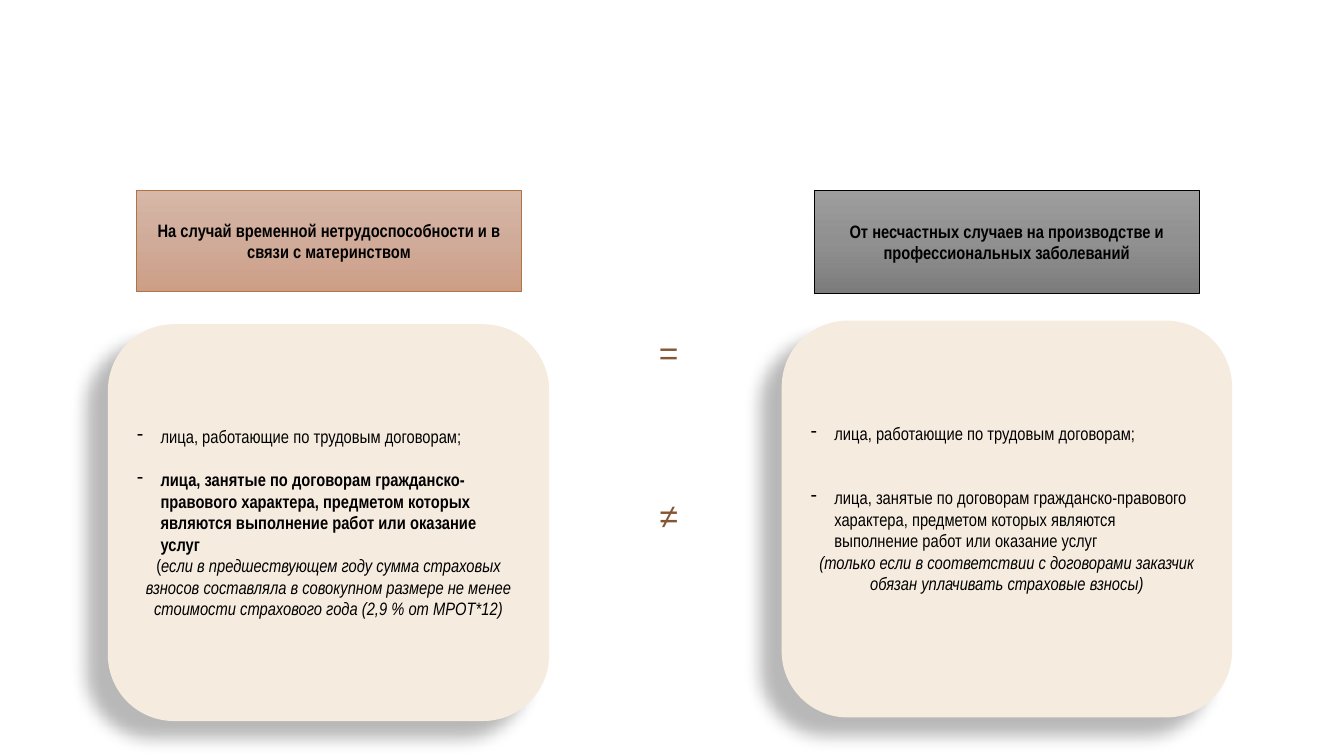
from copy import deepcopy

from lxml import etree
from pptx import Presentation
from pptx.dml.color import RGBColor
from pptx.enum.shapes import MSO_SHAPE
from pptx.enum.text import MSO_ANCHOR, MSO_AUTO_SIZE, PP_ALIGN
from pptx.oxml.ns import qn
from pptx.util import Cm, Pt

RECTANGLE, ROUNDED = MSO_SHAPE.RECTANGLE, MSO_SHAPE.ROUNDED_RECTANGLE
MIDDLE = MSO_ANCHOR.MIDDLE
LEFT, CENTER = PP_ALIGN.LEFT, PP_ALIGN.CENTER
GROW = MSO_AUTO_SIZE.SHAPE_TO_FIT_TEXT

BLACK = RGBColor(0x00, 0x00, 0x00)
CREAM = RGBColor(0xF6, 0xEB, 0xDF)
BROWN = RGBColor(0x85, 0x56, 0x33)
COPPER = RGBColor(0xB2, 0x73, 0x44)
COPPER_SHADES = [RGBColor(0xD7, 0xB7, 0xA7), RGBColor(0xD0, 0xAB, 0x99),
                 RGBColor(0xCD, 0x9E, 0x86)]
GREY_SHADES = [RGBColor(0x9D, 0x9D, 0x9D), RGBColor(0x90, 0x90, 0x90),
               RGBColor(0x7C, 0x7C, 0x7C)]

TEXT_SIZE = Pt(12.8)
LINE_HEIGHT = 15.3  # points
HANGING = Cm(0.59)

EMPLOYEES = "лица, работающие по трудовым договорам;"
CONTRACTORS = ("лица, занятые по договорам гражданско-правового характера, "
               "предметом которых являются выполнение работ или оказание услуг")
SICK_LEAVE_NOTE = ("если в предшествующем году сумма страховых взносов составляла "
                   "в совокупном размере не менее стоимости страхового года "
                   "(2,9 % от МРОТ*12)")
ACCIDENT_NOTE = ("(только если в соответствии с договорами заказчик обязан "
                 "уплачивать страховые взносы)")


def style_run(run, bold=False, italic=False):
    run.font.name = "Arial Narrow"
    run.font.size = TEXT_SIZE
    run.font.color.rgb = BLACK
    run.font.bold = bold
    run.font.italic = italic


def add_heading(slide, box, title, shades, outline):
    """Gradient rectangle with the name of the insurance type."""
    heading = slide.shapes.add_shape(RECTANGLE, *box)
    heading.shadow.inherit = False
    heading.line.color.rgb = outline
    heading.line.width = Pt(0.5)

    # Three-step gradient from top to bottom
    heading.fill.gradient()
    heading.fill.gradient_angle = 270
    steps = heading._element.spPr.find(".//" + qn("a:gsLst"))
    steps.insert(1, deepcopy(steps[0]))
    for index, (stop, shade) in enumerate(zip(heading.fill.gradient_stops, shades)):
        stop.color.rgb = shade
        stop.position = index / 2

    frame = heading.text_frame
    frame.word_wrap = True
    frame.vertical_anchor = MIDDLE
    frame.text = title
    frame.paragraphs[0].alignment = CENTER
    style_run(frame.paragraphs[0].runs[0], bold=True)


def add_soft_shadow(card):
    card.shadow.inherit = False
    effects = card._element.spPr.find(qn("a:effectLst"))
    shadow = etree.SubElement(effects, qn("a:outerShdw"), blurRad=str(Pt(11.8)),
                              dist=str(Pt(19.7)), dir=str(141 * 60000),
                              algn="tr", rotWithShape="0")
    color = etree.SubElement(shadow, qn("a:srgbClr"), val=str(BLACK))
    etree.SubElement(color, qn("a:alpha"), val="28000")


def add_dash(paragraph):
    properties = paragraph._p.get_or_add_pPr()
    properties.set("marL", str(HANGING))
    properties.set("indent", str(-HANGING))
    etree.SubElement(properties, qn("a:buChar"), char="-")


def add_card(slide, box, note_parts, gap_lines, bold_contractors, bottom_margin):
    """Rounded card listing the insured persons, with a centred note below."""
    card = slide.shapes.add_shape(ROUNDED, *box)
    card.fill.solid()
    card.fill.fore_color.rgb = CREAM
    card.line.fill.background()
    add_soft_shadow(card)

    frame = card.text_frame
    frame.word_wrap = True
    frame.vertical_anchor = MIDDLE
    frame.margin_bottom = bottom_margin

    # Insured persons
    employees, contractors = frame.paragraphs[0], frame.add_paragraph()
    for persons, wording, bold in ((employees, EMPLOYEES, False),
                                   (contractors, CONTRACTORS, bold_contractors)):
        persons.text = wording
        add_dash(persons)
        persons.alignment = LEFT
        style_run(persons.runs[0], bold=bold)
    contractors.space_before = Pt(gap_lines * LINE_HEIGHT)

    # Note
    note = frame.add_paragraph()
    note.alignment = CENTER
    for wording, italic in note_parts:
        run = note.add_run()
        run.text = wording
        style_run(run, italic=italic)


def add_sign(slide, box, sign):
    """Comparison sign between the two cards."""
    sign_box = slide.shapes.add_textbox(*box)
    frame = sign_box.text_frame
    frame.word_wrap = True
    frame.auto_size = GROW
    frame.text = sign
    frame.paragraphs[0].alignment = CENTER
    font = frame.paragraphs[0].runs[0].font
    font.name = "Arial"
    font.size = Pt(24)
    font.color.rgb = BROWN


def main():
    deck = Presentation()
    deck.slide_width, deck.slide_height = Cm(33.87), Cm(19.05)
    slide = deck.slides.add_slide(deck.slide_layouts[6])

    # Temporary disability and maternity
    add_heading(slide, (Cm(3.44), Cm(4.8), Cm(9.7), Cm(2.55)),
                "На случай временной нетрудоспособности и в связи с материнством",
                COPPER_SHADES, COPPER)
    add_card(slide, (Cm(2.72), Cm(8.17), Cm(11.12), Cm(10)),
             [("(", False), (SICK_LEAVE_NOTE, True)],
             gap_lines=1, bold_contractors=True, bottom_margin=Cm(0.13))

    # Accidents at work
    add_heading(slide, (Cm(20.52), Cm(4.8), Cm(9.7), Cm(2.6)),
                "От несчастных случаев на производстве и профессиональных заболеваний",
                GREY_SHADES, BLACK)
    add_card(slide, (Cm(19.7), Cm(8.08), Cm(11.35), Cm(10)),
             [(ACCIDENT_NOTE, True)],
             gap_lines=2, bold_contractors=False, bottom_margin=Cm(0.67))

    # Comparison
    add_sign(slide, (Cm(15.67), Cm(8.25), Cm(2.36), Cm(1.47)), "=")
    add_sign(slide, (Cm(16.03), Cm(12.34), Cm(1.65), Cm(1.47)), "≠")

    deck.save("out.pptx")


if __name__ == "__main__":
    main()
